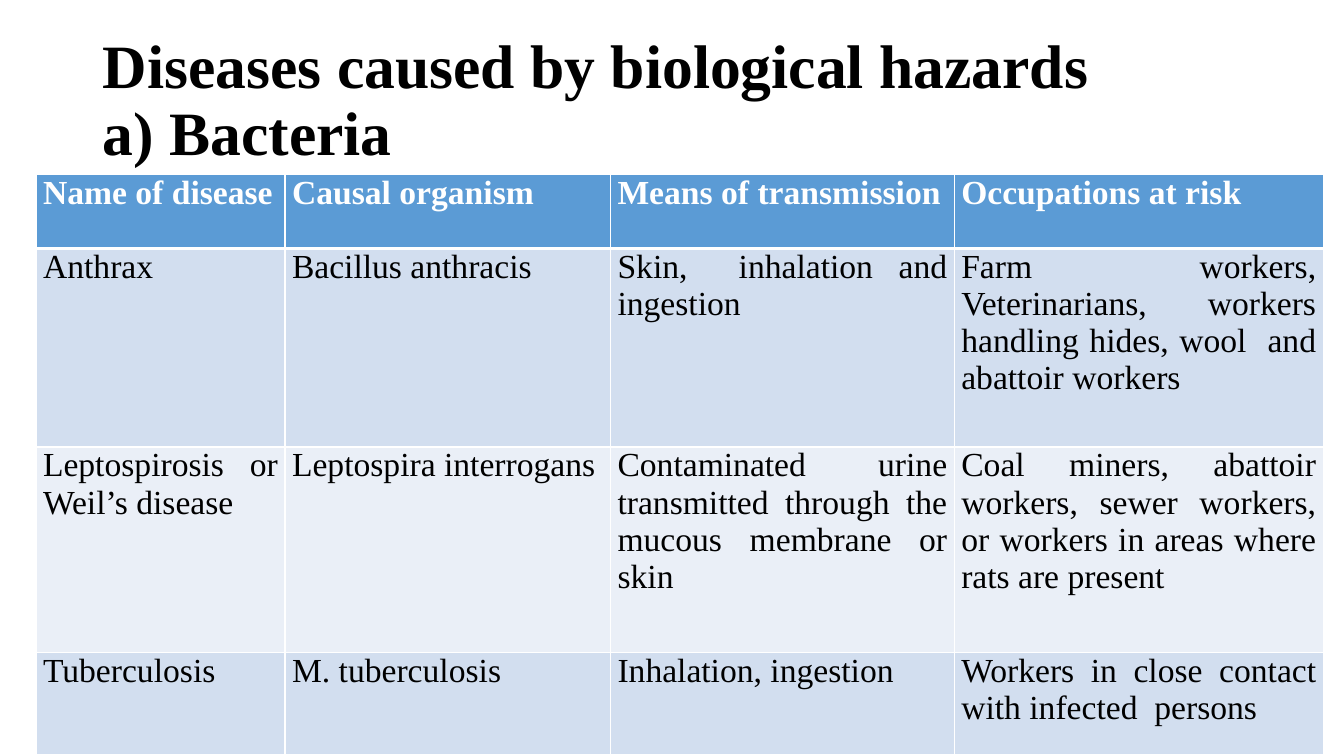
"""Build a slide with a table of bacterial diseases, their spread and the jobs at risk."""
from dataclasses import dataclass
from typing import Any

from lxml.etree import SubElement
from pptx import Presentation
from pptx.dml.color import RGBColor
from pptx.enum.text import MSO_ANCHOR as Anchor, MSO_AUTO_SIZE as AutoSize, PP_ALIGN as Align
from pptx.oxml.ns import qn
from pptx.util import Inches, Pt

COLORS = {
    "heading": "000000",
    "header_text": "FFFFFF",
    "header_fill": "5B9BD5",
    "body_text": "000000",
    "odd_fill": "D2DEEF",
    "even_fill": "EAEFF7",
    "border": "FFFFFF",
}
WIDTH, HEIGHT = Inches(13.33), Inches(7.5)
COLUMN_SHARES = (18.53, 24.22, 25.58, 27.45)
TITLE_FONT = {"name": "Times New Roman", "size": Pt(44), "bold": True}
HEADER_FONT = {"name": "Times New Roman", "size": Pt(24), "bold": True}
BODY_FONT = {**HEADER_FONT, "bold": False}
CELL_FORMAT = {
    "margin_left": Inches(0.07),
    "margin_right": Inches(0.07),
    "margin_top": 0,
    "margin_bottom": 0,
    "vertical_anchor": Anchor.TOP,
}


@dataclass(frozen=True)
class DiseaseRow:
    share: float
    texts: tuple[str, str, str, str]


ROWS = (
    DiseaseRow(9.73, ("Name of disease", "Causal organism",
                      "Means of transmission", "Occupations at risk")),
    DiseaseRow(26.27, ("Anthrax", "Bacillus anthracis", "Skin,  inhalation and ingestion",
                       "Farm workers, Veterinarians, workers handling hides, wool  and "
                       "abattoir workers")),
    DiseaseRow(27.2, ("Leptospirosis or Weil’s disease", "Leptospira interrogans",
                      "Contaminated urine transmitted through the mucous membrane or skin",
                      "Coal miners, abattoir workers, sewer workers, or workers in areas "
                      "where rats are present")),
    DiseaseRow(13.47, ("Tuberculosis", "M. tuberculosis", "Inhalation, ingestion",
                       "Workers in close contact with infected  persons")),
)


def across(percent: float) -> int:
    return round(WIDTH * percent / 100)


def down(percent: float) -> int:
    return round(HEIGHT * percent / 100)


def apply(target: Any, values: dict[str, Any]) -> None:
    for name, value in values.items():
        setattr(target, name, value)


def write(para: Any, text: str, font: dict[str, Any], color: str) -> None:
    para.text = text
    for span in para.runs:
        apply(span.font, font)
        span.font.color.rgb = RGBColor.from_string(COLORS[color])


def add_borders(cell: Any, row: int) -> None:
    properties = cell._tc.get_or_add_tcPr()
    widths = {"lnL": 1, "lnR": 1, "lnT": 3 if row == 1 else 1, "lnB": 3 if row == 0 else 1}
    for side, width in widths.items():
        line = SubElement(properties, qn(f"a:{side}"), w=str(Pt(width)))
        fill = SubElement(line, qn("a:solidFill"))
        SubElement(fill, qn("a:srgbClr"), val=COLORS["border"])


def fill_cell(cell: Any, text: str, row: int) -> None:
    add_borders(cell, row)
    apply(cell, CELL_FORMAT)
    kind = "header_fill" if row == 0 else "odd_fill" if row % 2 else "even_fill"
    cell.fill.solid()
    cell.fill.fore_color.rgb = RGBColor.from_string(COLORS[kind])
    para = cell.text_frame.paragraphs[0]
    font, color = (BODY_FONT, "body_text") if row else (HEADER_FONT, "header_text")
    write(para, text, font, color)
    para.alignment = Align.JUSTIFY


def add_title(page: Any) -> None:
    title = page.shapes.title
    apply(title, {"left": across(6.9), "top": down(3.73),
                  "width": across(86.25), "height": down(19.47)})
    apply(title.text_frame, {"word_wrap": True, "auto_size": AutoSize.NONE,
                             "vertical_anchor": Anchor.MIDDLE})
    para = title.text_frame.paragraphs[0]
    write(para, "Diseases caused by biological hazards\va) Bacteria", TITLE_FONT, "heading")
    apply(para, {"alignment": Align.LEFT, "line_spacing": 0.9})


def add_disease_table(page: Any) -> None:
    frame = page.shapes.add_table(
        len(ROWS), len(COLUMN_SHARES), across(2.68), down(23.13),
        across(sum(COLUMN_SHARES)), down(sum(entry.share for entry in ROWS)))
    table = frame.table
    for column, share in zip(table.columns, COLUMN_SHARES):
        column.width = across(share)
    for row, entry in enumerate(ROWS):
        table.rows[row].height = down(entry.share)
        for column, text in enumerate(entry.texts):
            fill_cell(table.cell(row, column), text, row)


def main() -> None:
    deck = Presentation()
    apply(deck, {"slide_width": WIDTH, "slide_height": HEIGHT})
    page = deck.slides.add_slide(deck.slide_layouts.get_by_name("Title Only"))
    add_title(page)
    add_disease_table(page)
    deck.save("out.pptx")


if __name__ == "__main__":
    main()
